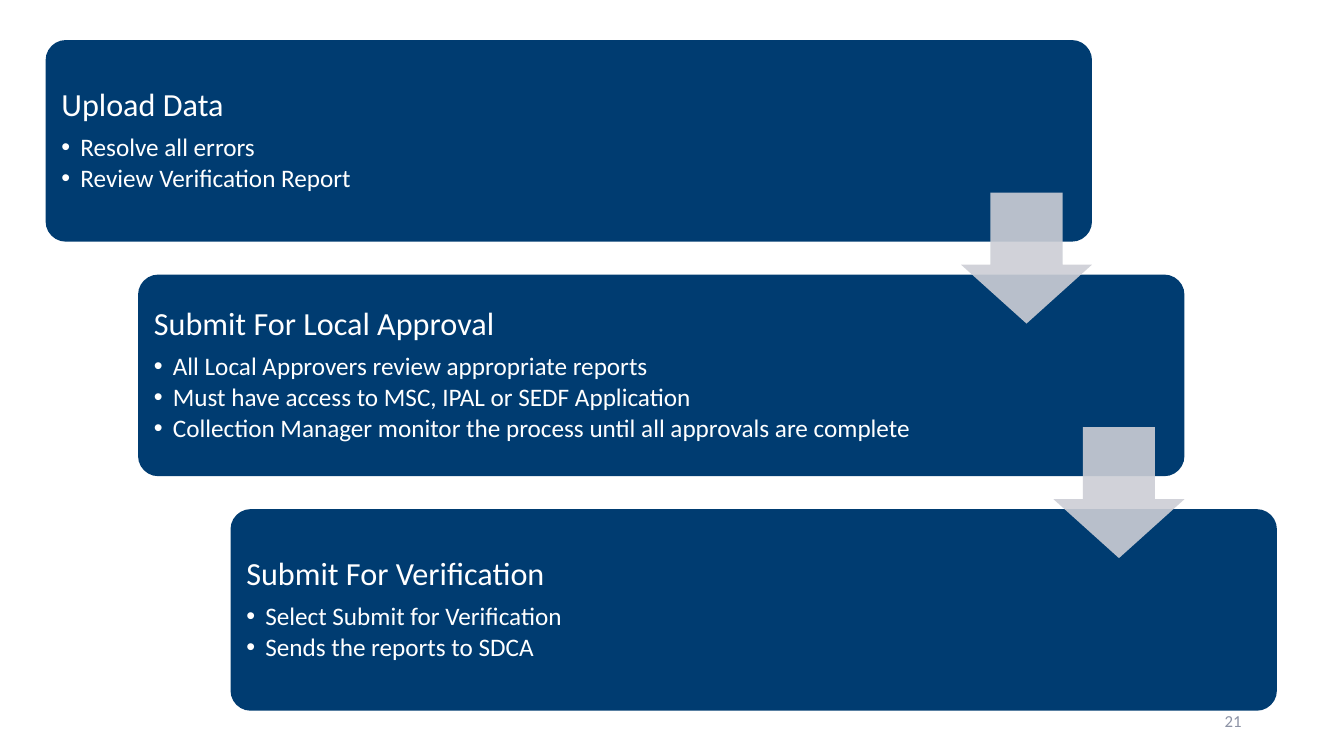
from lxml.etree import SubElement
from pptx import Presentation
from pptx.dml.color import RGBColor
from pptx.enum.shapes import MSO_SHAPE
from pptx.enum.text import MSO_ANCHOR, PP_ALIGN
from pptx.oxml.ns import qn
from pptx.util import Cm, Pt

STEPS = [
    ("Upload Data", ["Resolve all errors", "Review Verification Report"]),
    ("Submit For Local Approval", [
        "All Local Approvers review appropriate reports",
        "Must have access to MSC, IPAL or SEDF Application",
        "Collection Manager monitor the process until all approvals are complete",
    ]),
    ("Submit For Verification", ["Select Submit for Verification", "Sends the reports to SDCA"]),
]
LEFT, TOP = 1.15, 1.01
CARD_W, CARD_H = 26.37, 5.08
STEP_X, STEP_Y = 2.33, 5.91
ARROW = 3.3


def add_filled(preset, x, y, w, h, color):
    shape = slide.shapes.add_shape(preset, Cm(x), Cm(y), Cm(w), Cm(h))
    shape.shadow.inherit = False
    shape.fill.solid()
    shape.fill.fore_color.rgb = RGBColor.from_string(color)
    shape.line.fill.background()
    return shape


def add_run(paragraph, text, size, color):
    run = paragraph.add_run()
    run.text = text
    run.font.name = "Calibri"
    run.font.size = Pt(size)
    run.font.color.rgb = RGBColor.from_string(color)


prs = Presentation()
prs.slide_width, prs.slide_height = Cm(33.87), Cm(19.05)
slide = prs.slides.add_slide(prs.slide_layouts[6])

# Slide number
number = slide.shapes.add_textbox(Cm(23.92), Cm(17.66), Cm(7.62), Cm(1.01)).text_frame
number.word_wrap = True
number.vertical_anchor = MSO_ANCHOR.MIDDLE
number.paragraphs[0].alignment = PP_ALIGN.RIGHT
add_run(number.paragraphs[0], "21", 12, "8C92A5")

# Staggered step cards
for i, (heading, details) in enumerate(STEPS):
    card = add_filled(MSO_SHAPE.ROUNDED_RECTANGLE, LEFT + i * STEP_X, TOP + i * STEP_Y,
                      CARD_W, CARD_H, "003C71")
    card.adjustments[0] = 0.1
    content = card.text_frame
    content.word_wrap = True
    content.vertical_anchor = MSO_ANCHOR.MIDDLE
    content.margin_left = content.margin_right = Cm(0.25)
    content.margin_top = content.margin_bottom = Cm(0.25)

    title = content.paragraphs[0]
    title.alignment = PP_ALIGN.LEFT
    title.line_spacing = 0.9
    title.space_after = Pt(8)
    add_run(title, heading, 23, "FFFFFF")

    for detail in details:
        item = content.add_paragraph()
        item.level = 1
        item.alignment = PP_ALIGN.LEFT
        item.line_spacing = 0.9
        item.space_after = Pt(2.7)
        props = item._p.get_or_add_pPr()
        props.set("marL", str(Cm(0.48)))
        props.set("indent", str(-Cm(0.48)))
        SubElement(props, qn("a:buFont")).set("typeface", "Arial")
        SubElement(props, qn("a:buChar")).set("char", "•")
        add_run(item, detail, 18, "FFFFFF")

# Arrows centred on the gaps, flush with the right edge of the upper card
for i in range(len(STEPS) - 1):
    gap_middle = TOP + i * STEP_Y + (CARD_H + STEP_Y) / 2
    arrow = add_filled(MSO_SHAPE.DOWN_ARROW, LEFT + i * STEP_X + CARD_W - ARROW,
                       gap_middle - ARROW / 2, ARROW, ARROW, "CCCED5")
    arrow.adjustments[0] = 0.55
    arrow.adjustments[1] = 0.45
    fill_color = arrow._element.spPr.find(qn("a:solidFill"))[0]
    SubElement(fill_color, qn("a:alpha")).set("val", "90000")

prs.save("out.pptx")
